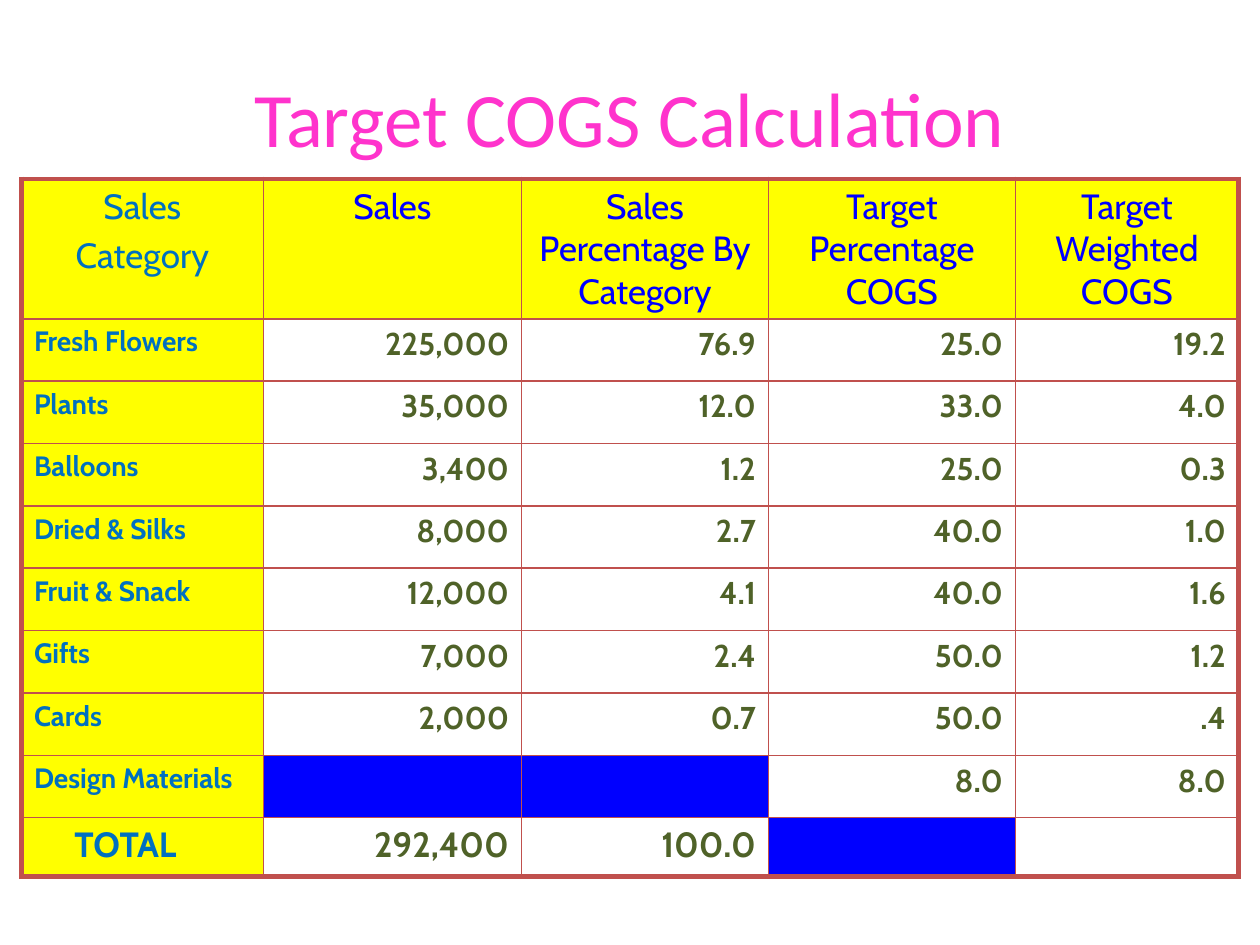
from lxml import etree
from pptx import Presentation, util as u
from pptx.dml.color import RGBColor
from pptx.enum import text as t
from pptx.oxml import ns

HEADS = ["Sales\nCategory", "Sales", "Sales Percentage By Category",
         "Target Percentage COGS", "Target Weighted COGS"]
ROWS = [
    ["Fresh Flowers", "225,000", "76.9", "25.0", "19.2"],
    ["Plants", "35,000", "12.0", "33.0", "4.0"],
    ["Balloons", "3,400", "1.2", "25.0", "0.3"],
    ["Dried & Silks", "8,000", "2.7", "40.0", "1.0"],
    ["Fruit & Snack", "12,000", "4.1", "40.0", "1.6"],
    ["Gifts", "7,000", "2.4", "50.0", "1.2"],
    ["Cards", "2,000", "0.7", "50.0", ".4"],
    ["Design Materials", None, None, "8.0", "8.0"],
    ["TOTAL", "292,400", "100.0", None, ""],
]
WIDTHS = [1.92, 2.05, 1.96, 1.96, 1.77]
HEAD, BODY, FOOT = 1.11, 0.495, 0.47
YELLOW, BLUE, TEAL, GREEN = "FFFF00", "0000FF", "0070C0", "4F6228"
EDGE, PINK = "C0504D", "FF33CC"
LEFT, MID, RIGHT = t.PP_ALIGN.LEFT, t.PP_ALIGN.CENTER, t.PP_ALIGN.RIGHT


def tint(part, shade):
    """Set a fill to a solid colour, or a font to a colour."""
    if hasattr(part, "solid"):
        part.solid()
        part = part.fore_color
    else:
        part = part.color
    part.rgb = RGBColor.from_string(shade)


def write(frame, words, size=18, shade=GREEN, bold=False, align=LEFT,
          face="Cabin", indent=0):
    """Write each line of the words as one formatted paragraph."""
    frame.word_wrap = True
    for num, line in enumerate(words.split("\n")):
        para = frame.add_paragraph() if num else frame.paragraphs[0]
        para.alignment = align
        if num:
            para.space_before = u.Pt(size * 0.2)
        if indent:
            para._p.get_or_add_pPr().set("marL", str(u.Inches(indent)))
        run = para.add_run()
        run.text = line
        run.font.size, run.font.bold, run.font.name = u.Pt(size), bold, face
        tint(run.font, shade)


def edge(cell, thick):
    """Draw the four borders, with 3 points on the thick sides."""
    props = cell._tc.get_or_add_tcPr()
    for side in "LRTB":
        width = u.Pt(3 if side in thick else 1)
        line = etree.SubElement(props, ns.qn(f"a:ln{side}"), w=str(width))
        fill = etree.SubElement(line, ns.qn("a:solidFill"))
        etree.SubElement(fill, ns.qn("a:srgbClr"), val=EDGE)


def style(row, col, last):
    """Return the text format for a place in the table."""
    if row == 0:
        return dict(size=20, align=MID, shade=BLUE if col else TEAL)
    if col:
        return dict(size=20 if row == last else 18, bold=True, align=RIGHT)
    if row == last:
        return dict(size=20, bold=True, shade=TEAL, indent=0.32)
    return dict(size=16, bold=True, shade=TEAL)


def grid(slide, left, top):
    """Add the sales table."""
    data = [HEADS] + ROWS
    last, end = len(data) - 1, len(WIDTHS) - 1
    highs = [HEAD] + [BODY] * (last - 1) + [FOOT]
    table = slide.shapes.add_table(
        len(data), len(WIDTHS), left, top,
        u.Inches(sum(WIDTHS)), u.Inches(sum(highs))).table
    table.first_row = table.horz_banding = False
    for col, width in zip(table.columns, WIDTHS):
        col.width = u.Inches(width)
    for row, high in zip(table.rows, highs):
        row.height = u.Inches(high)
    for r, line in enumerate(data):
        for c, words in enumerate(line):
            cell = table.cell(r, c)
            sides = {"T": r == 0, "B": r == last, "L": c == 0, "R": c == end}
            edge(cell, [side for side, on in sides.items() if on])
            if words is None:
                tint(cell.fill, BLUE)
            elif r == 0 or c == 0:
                tint(cell.fill, YELLOW)
            else:
                cell.fill.background()
            if words:
                write(cell.text_frame, words, **style(r, c, last))


def head(slide, wide, high):
    """Add the slide title."""
    box = slide.shapes.add_textbox(
        int(wide * 0.05), int(high * 0.04), int(wide * 0.9), u.Inches(1.25))
    box.text_frame.vertical_anchor = t.MSO_ANCHOR.MIDDLE
    write(box.text_frame, "Target COGS Calculation", size=44, shade=PINK,
          align=MID, face="Calibri")


def main():
    """Build and save the slide."""
    deck = Presentation()
    deck.slide_width, deck.slide_height = u.Inches(10), u.Inches(7.5)
    slide = deck.slides.add_slide(deck.slide_layouts[6])
    head(slide, deck.slide_width, deck.slide_height)
    grid(slide, u.Inches(0.17), u.Inches(1.42))
    deck.save("out.pptx")


if __name__ == "__main__":
    main()
